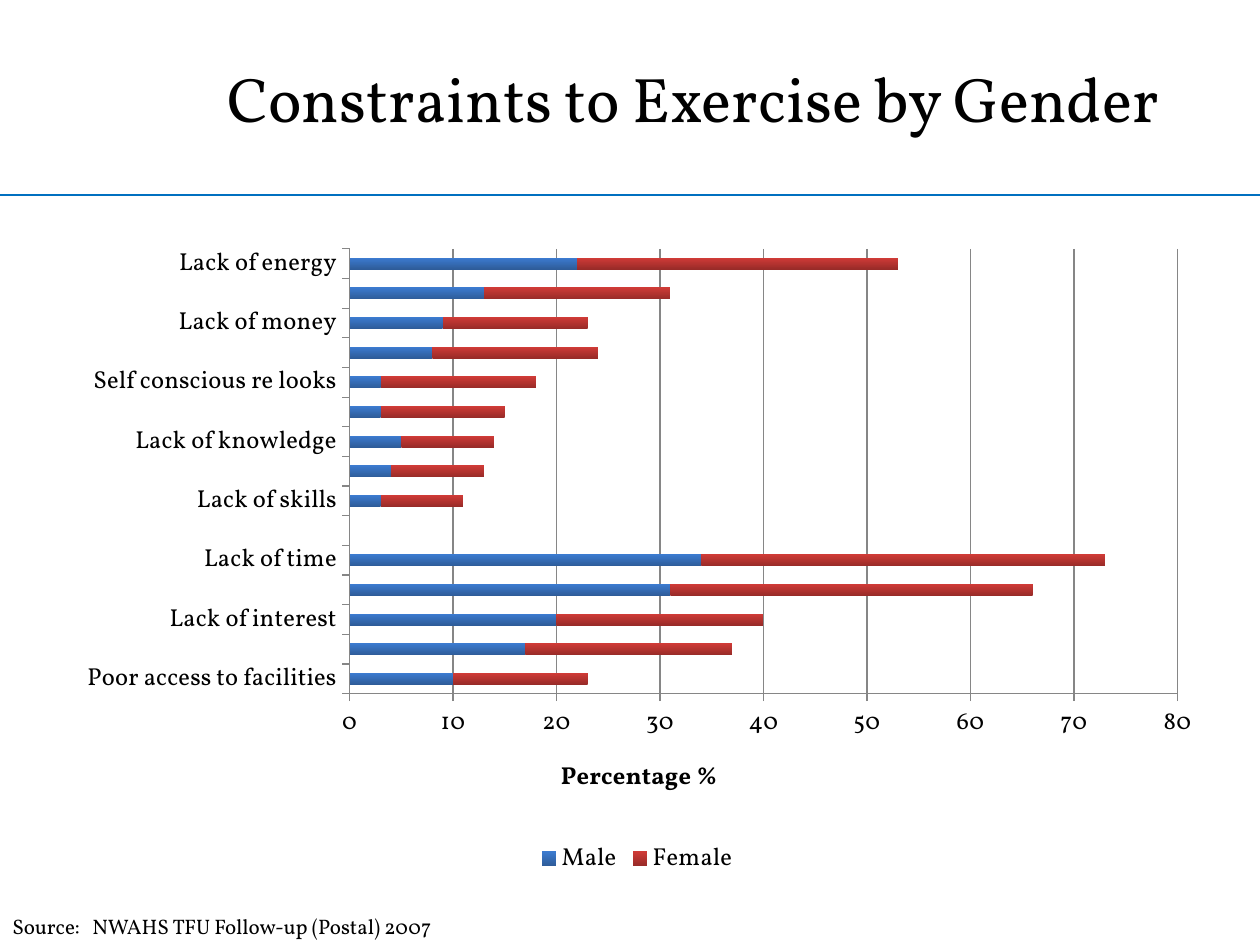
from lxml import etree
from pptx import Presentation
from pptx.chart.data import CategoryChartData
from pptx.dml.color import RGBColor
from pptx.enum.chart import XL_CHART_TYPE, XL_LEGEND_POSITION, XL_TICK_MARK
from pptx.enum.shapes import MSO_CONNECTOR
from pptx.enum.text import MSO_ANCHOR, PP_ALIGN
from pptx.oxml import parse_xml
from pptx.oxml.ns import nsdecls, qn
from pptx.util import Emu, Pt

STACKED_BAR = XL_CHART_TYPE.BAR_STACKED
LEGEND_BOTTOM = XL_LEGEND_POSITION.BOTTOM
TICK_OUTSIDE = XL_TICK_MARK.OUTSIDE
TICK_NONE = XL_TICK_MARK.NONE
STRAIGHT = MSO_CONNECTOR.STRAIGHT
MIDDLE = MSO_ANCHOR.MIDDLE
CENTER = PP_ALIGN.CENTER

PX_PER_INCH = 126
FONT = "Vollkorn"
BLACK = "000000"
RULE_BLUE = "0070C0"
AXIS_GRAY = "868686"

# Constraint, male %, female %, from the bottom of the chart upwards;
# every second bar is unlabelled
CONSTRAINTS = [
    ("Poor access to facilities", 10, 13),
    ("", 17, 20),
    ("Lack of interest", 20, 20),
    ("", 31, 35),
    ("Lack of time", 34, 39),
    ("", None, None),
    ("Lack of skills", 3, 8),
    ("", 4, 9),
    ("Lack of knowledge", 5, 9),
    ("", 3, 12),
    ("Self conscious re looks", 3, 15),
    ("", 8, 16),
    ("Lack of money", 9, 14),
    ("", 13, 18),
    ("Lack of energy", 22, 31),
]
# Bottom and top colour of the bars of each gender
BAR_SHADES = [("2E5C99", "3C7BD0"), ("982B28", "D03B37")]


def px(length):
    return Emu(round(length * 914400 / PX_PER_INCH))


def rgb(hex_color):
    return RGBColor.from_string(hex_color)


def style_font(font, size, bold=False):
    font.name = FONT
    font.size = Pt(size)
    font.bold = bold
    font.color.rgb = rgb(BLACK)


def style_line(line, color, width):
    line.color.rgb = rgb(color)
    line.width = Pt(width)


def add_run(paragraph, text, size, bold=False):
    run = paragraph.add_run()
    run.text = text
    style_font(run.font, size, bold)


def add_title(slide, text):
    title = slide.shapes.title
    title.left, title.top, title.width, title.height = px(126), px(0), px(1134), px(194)
    title.text_frame.vertical_anchor = MIDDLE
    paragraph = title.text_frame.paragraphs[0]
    paragraph.alignment = CENTER
    add_run(paragraph, text, 36)


def add_rule(slide, top):
    rule = slide.shapes.add_connector(STRAIGHT, px(0), px(top), px(1260), px(top))
    style_line(rule.line, RULE_BLUE, 1.5)
    etree.SubElement(rule._element.spPr, qn("a:effectLst"))


def style_axis(axis):
    axis.major_tick_mark = TICK_OUTSIDE
    axis.minor_tick_mark = TICK_NONE
    style_line(axis.format.line, AXIS_GRAY, 0.75)
    style_font(axis.tick_labels.font, 14)


def label_every_second(category_axis):
    skip = parse_xml(f'<c:tickLblSkip {nsdecls("c")} val="2"/>')
    category_axis._element.find(qn("c:noMultiLvlLbl")).addprevious(skip)


def place_plot(chart, x, y, w, h):
    """Fix the inner plot area, in fractions of the chart."""
    plot_area = chart._chartSpace.chart.plotArea
    for old in plot_area.findall(qn("c:layout")):
        plot_area.remove(old)
    plot_area.insert(0, parse_xml(
        f'<c:layout {nsdecls("c")}><c:manualLayout><c:layoutTarget val="inner"/>'
        '<c:xMode val="edge"/><c:yMode val="edge"/>'
        f'<c:x val="{x}"/><c:y val="{y}"/><c:w val="{w}"/><c:h val="{h}"/>'
        '</c:manualLayout></c:layout>'))


def shade_bars(series, shades):
    fill = series.format.fill
    fill.gradient()
    fill.gradient_angle = 90
    for stop, shade in zip(fill.gradient_stops, shades):
        stop.color.rgb = rgb(shade)


def add_constraints_chart(slide):
    names, male, female = zip(*CONSTRAINTS)
    data = CategoryChartData()
    data.categories = names
    data.add_series("Male", male)
    data.add_series("Female", female)
    chart = slide.shapes.add_chart(
        STACKED_BAR, px(62), px(236), px(1150), px(645), data).chart
    style_font(chart.font, 10)
    chart.has_title = False
    place_plot(chart, 0.25, 0.02, 0.72, 0.69)

    bars = chart.plots[0]
    bars.gap_width = 150
    bars.overlap = 100
    for series, shades in zip(bars.series, BAR_SHADES):
        shade_bars(series, shades)

    style_axis(chart.category_axis)
    label_every_second(chart.category_axis)

    percent_axis = chart.value_axis
    style_axis(percent_axis)
    percent_axis.minimum_scale = 0
    percent_axis.maximum_scale = 80
    percent_axis.major_unit = 10
    style_line(percent_axis.major_gridlines.format.line, AXIS_GRAY, 0.75)
    caption = percent_axis.axis_title.text_frame.paragraphs[0]
    add_run(caption, "Percentage %", 14, bold=True)

    chart.has_legend = True
    chart.legend.position = LEGEND_BOTTOM
    chart.legend.include_in_layout = False
    style_font(chart.legend.font, 14)


def add_source(slide, label, citation):
    """Source line, with a tab stop between label and citation."""
    frame = slide.shapes.add_textbox(px(0), px(907), px(491), px(38)).text_frame
    frame.word_wrap = True
    paragraph = frame.paragraphs[0]
    stops = etree.SubElement(paragraph._p.get_or_add_pPr(), qn("a:tabLst"))
    etree.SubElement(stops, qn("a:tab"), pos=str(px(80)), algn="l")
    add_run(paragraph, f"{label}\t{citation}", 12)


def main():
    presentation = Presentation()
    presentation.slide_width = px(1260)
    presentation.slide_height = px(945)
    slide = presentation.slides.add_slide(presentation.slide_layouts[5])
    add_title(slide, "Constraints to Exercise by Gender")
    add_rule(slide, 195)
    add_constraints_chart(slide)
    add_source(slide, "Source:", "NWAHS TFU Follow-up (Postal) 2007")
    presentation.save("out.pptx")


if __name__ == "__main__":
    main()
